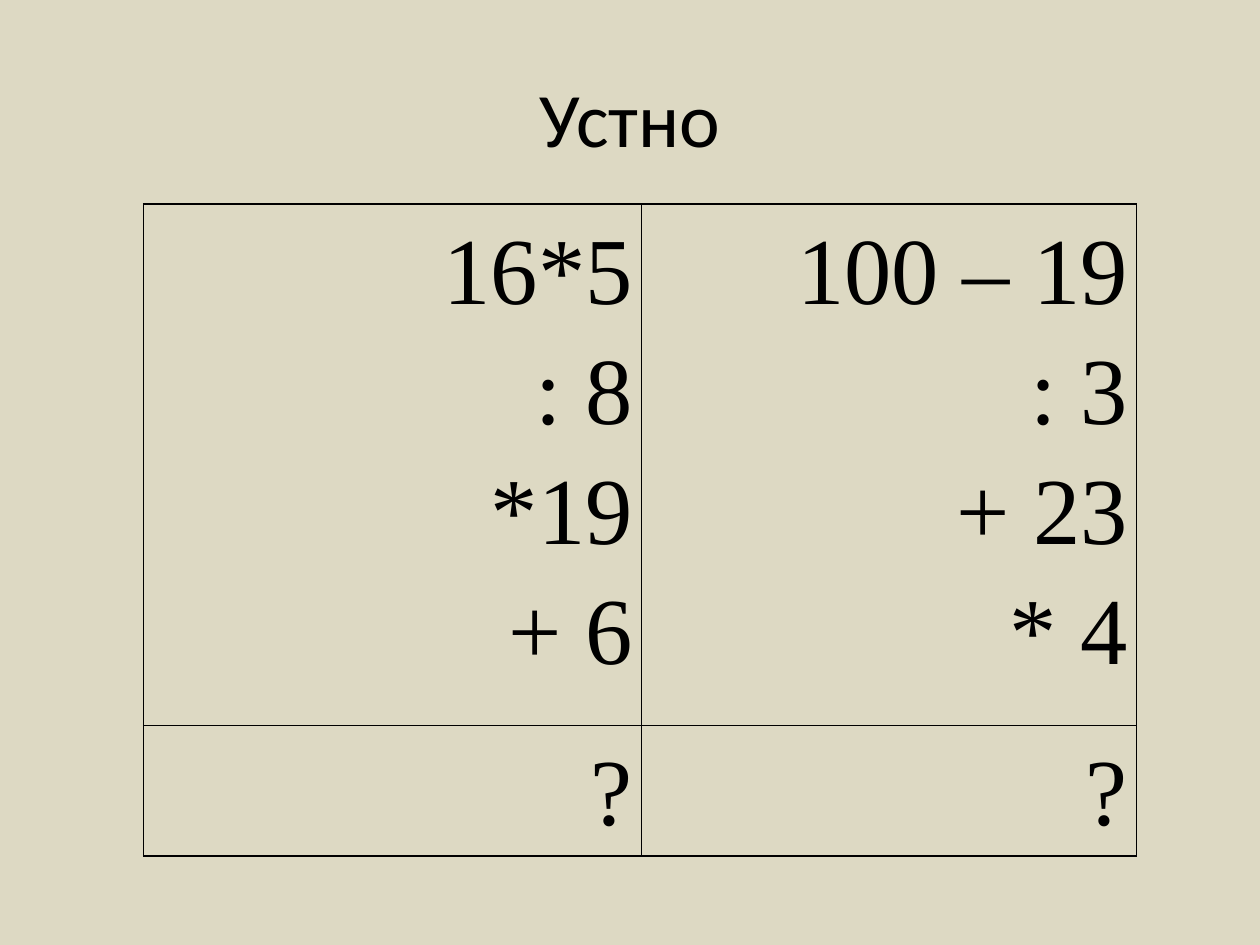
from lxml import etree
from pptx import Presentation
from pptx.dml.color import RGBColor
from pptx.enum.text import MSO_ANCHOR, PP_ALIGN
from pptx.oxml.ns import qn
from pptx.util import Inches, Pt

TITLE = "Устно"
ROWS = [
    [["16*5", ": 8", "*19", "+ 6"], ["100 – 19", ": 3", "+ 23", "* 4"]],
    [["?"], ["?"]],
]
COLUMN_WIDTHS = [3.95, 3.93]
ROW_HEIGHTS = [3.91, 0.98]
TABLE_LEFT, TABLE_TOP = 1.14, 1.62
COLORS = {"background": "DDD9C3", "ink": "000000"}


def write_text(frame, lines, font, size, align, spacing=1.0):
    for index, line in enumerate(lines):
        paragraph = frame.paragraphs[0] if index == 0 else frame.add_paragraph()
        paragraph.alignment = align
        paragraph.line_spacing = spacing
        run = paragraph.add_run()
        run.text = line
        run.font.name = font
        run.font.size = Pt(size)
        run.font.bold = False
        run.font.color.rgb = RGBColor.from_string(COLORS["ink"])


def add_borders(cell, width=1):
    properties = cell._tc.get_or_add_tcPr()
    for side in ("L", "R", "T", "B"):
        line = etree.SubElement(properties, qn(f"a:ln{side}"), w=str(Pt(width)))
        fill = etree.SubElement(line, qn("a:solidFill"))
        etree.SubElement(fill, qn("a:srgbClr"), val=COLORS["ink"])


presentation = Presentation()
presentation.slide_width, presentation.slide_height = Inches(10), Inches(7.5)
slide = presentation.slides.add_slide(presentation.slide_layouts[6])
slide.background.fill.solid()
slide.background.fill.fore_color.rgb = RGBColor.from_string(COLORS["background"])

title = slide.shapes.add_textbox(Inches(0.5), Inches(0.3), Inches(9), Inches(1.25))
title.text_frame.word_wrap = True
title.text_frame.vertical_anchor = MSO_ANCHOR.MIDDLE
write_text(title.text_frame, [TITLE], "Calibri", 44, PP_ALIGN.CENTER)

table = slide.shapes.add_table(
    len(ROWS), len(COLUMN_WIDTHS), Inches(TABLE_LEFT), Inches(TABLE_TOP),
    Inches(sum(COLUMN_WIDTHS)), Inches(sum(ROW_HEIGHTS)),
).table
table.first_row = table.horz_banding = False
for column, width in zip(table.columns, COLUMN_WIDTHS):
    column.width = Inches(width)
for row, height, contents in zip(table.rows, ROW_HEIGHTS, ROWS):
    row.height = Inches(height)
    for cell, lines in zip(row.cells, contents):
        cell.margin_left = cell.margin_right = Inches(0.07)
        cell.margin_top = cell.margin_bottom = 0
        add_borders(cell)
        cell.fill.background()
        write_text(cell.text_frame, lines, "Times New Roman", 54, PP_ALIGN.RIGHT, 1.15)

presentation.save("out.pptx")
